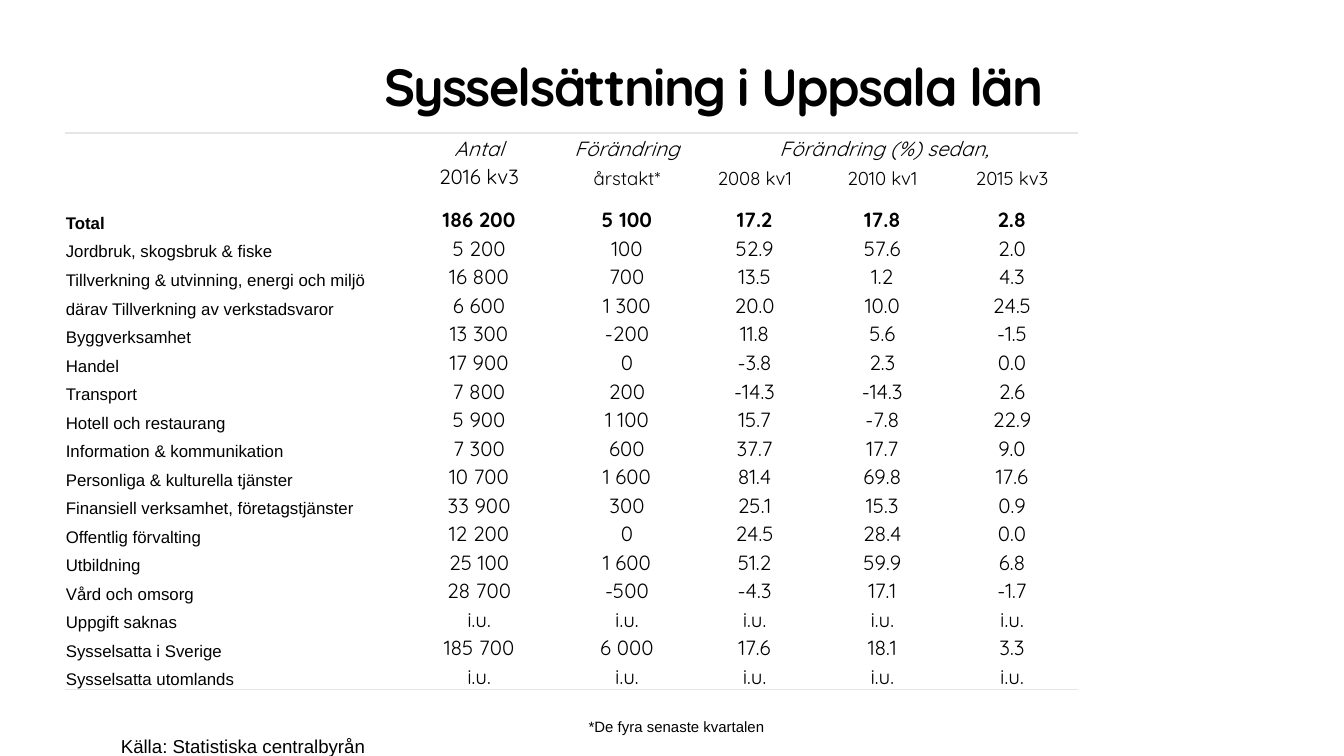
from pptx import Presentation
from pptx.dml.color import RGBColor
from pptx.enum.text import MSO_ANCHOR as Anchor, MSO_AUTO_SIZE as AutoSize, PP_ALIGN as Align
from pptx.oxml import parse_xml
from pptx.oxml.ns import nsdecls, qn
from pptx.util import Inches, Pt


def style(paragraph, color, **font_values):
    for run in paragraph.runs:
        for name, value in font_values.items():
            setattr(run.font, name, value)
        run.font.color.rgb = RGBColor.from_string(color)


def apply(target, values):
    for name, value in values.items():
        setattr(target, name, value)


BLACK, RULE = "000000", "E6E6E6"
PLAIN_TABLE = "{2D5ABB26-0587-4C30-8999-92F81FD0307C}"
FRAME = {"margin_left": 0, "margin_right": 0, "margin_top": 0, "margin_bottom": 0,
         "vertical_anchor": Anchor.TOP, "auto_size": AutoSize.NONE}
CELL = {"margin_left": Inches(0.01), "margin_right": Inches(0.01),
        "margin_top": Inches(0.01), "margin_bottom": 0,
        "vertical_anchor": Anchor.BOTTOM}

prs = Presentation()
prs.slide_width = Inches(10)
prs.slide_height = prs.slide_width * 9 // 16
slide = prs.slides.add_slide(prs.slide_layouts[5])

heading = slide.shapes.title
apply(heading, {"left": Inches(2.86), "top": Inches(0.4),
                "width": Inches(9.2), "height": Inches(0.8)})
apply(heading.text_frame, FRAME)
heading_line = heading.text_frame.paragraphs[0]
heading_line.text = "Sysselsättning i Uppsala län"
heading_line.alignment = Align.LEFT
style(heading_line, BLACK, name="Quicksand", size=Pt(28), bold=True)
heading_line.runs[0].font._element.set("spc", "-90")

employment = [
    ["", "Antal", "Förändring", "Förändring (%) sedan,", "", ""],
    ["", "2016 kv3", "årstakt*", "2008 kv1", "2010 kv1", "2015 kv3"],
    ["Total", "186 200", "5 100", "17.2", "17.8", "2.8"],
    ["Jordbruk, skogsbruk & fiske", "5 200", "100", "52.9", "57.6", "2.0"],
    ["Tillverkning & utvinning, energi och miljö", "16 800", "700", "13.5", "1.2", "4.3"],
    ["därav Tillverkning av verkstadsvaror", "6 600", "1 300", "20.0", "10.0", "24.5"],
    ["Byggverksamhet", "13 300", "-200", "11.8", "5.6", "-1.5"],
    ["Handel", "17 900", "0", "-3.8", "2.3", "0.0"],
    ["Transport", "7 800", "200", "-14.3", "-14.3", "2.6"],
    ["Hotell och restaurang", "5 900", "1 100", "15.7", "-7.8", "22.9"],
    ["Information & kommunikation", "7 300", "600", "37.7", "17.7", "9.0"],
    ["Personliga & kulturella tjänster", "10 700", "1 600", "81.4", "69.8", "17.6"],
    ["Finansiell verksamhet, företagstjänster", "33 900", "300", "25.1", "15.3", "0.9"],
    ["Offentlig förvalting", "12 200", "0", "24.5", "28.4", "0.0"],
    ["Utbildning", "25 100", "1 600", "51.2", "59.9", "6.8"],
    ["Vård och omsorg", "28 700", "-500", "-4.3", "17.1", "-1.7"],
    ["Uppgift saknas", "i.u.", "i.u.", "i.u.", "i.u.", "i.u."],
    ["Sysselsatta i Sverige", "185 700", "6 000", "17.6", "18.1", "3.3"],
    ["Sysselsatta utomlands", "i.u.", "i.u.", "i.u.", "i.u.", "i.u."],
]
last = len(employment) - 1
total_row, total_height, table_height = 2, 0.32, 4.14
row_height = (table_height - total_height) / last

table = slide.shapes.add_table(len(employment), 6, Inches(0.48), Inches(0.99),
                               Inches(7.54), Inches(table_height)).table
apply(table, {"first_row": False, "horz_banding": False})
table._tbl.tblPr.find(qn("a:tableStyleId")).text = PLAIN_TABLE
for column, width in zip(table.columns, [2.46, 1.25, 0.95, 0.95, 0.95, 0.98]):
    column.width = Inches(width)

for r, values in enumerate(employment):
    table.rows[r].height = Inches(total_height if r == total_row else row_height)
    for c, value in enumerate(values):
        cell = table.cell(r, c)
        apply(cell, CELL)
        cell.fill.background()
        line = cell.text_frame.paragraphs[0]
        line.alignment = Align.CENTER if c else Align.LEFT
        if value:
            line.text = value
            size = 9 if c == 0 else 10 if r == 1 and c > 1 else 11
            style(line, BLACK, name="Quicksand" if c else "Arial", size=Pt(size),
                  bold=r == total_row, italic=r == 0)
        else:
            line._p.append(parse_xml(f'<a:endParaRPr {nsdecls("a")} sz="900"/>'))
        edge = {0: "lnT", last: "lnB"}.get(r)
        if edge:
            cell._tc.get_or_add_tcPr().insert(0, parse_xml(
                f'<a:{edge} {nsdecls("a")} w="12700"><a:solidFill>'
                f'<a:srgbClr val="{RULE}"/></a:solidFill></a:{edge}>'))
table.cell(0, 3).merge(table.cell(0, 5))

notes = [
    ("Källa: Statistiska centralbyrån", 0.9, 5.3, 0.42, 10),
    ("*De fyra senaste kvartalen", 4.38, 5.14, 0.41, 8),
]
for words, left, top, height, size in notes:
    note = slide.shapes.add_textbox(Inches(left), Inches(top), Inches(1), Inches(height))
    apply(note.text_frame, {**FRAME, "word_wrap": False})
    note_line = note.text_frame.paragraphs[0]
    note_line.text = words
    note_line.line_spacing = Pt(24)
    style(note_line, BLACK, name="Arial", size=Pt(size))

prs.save("out.pptx")
